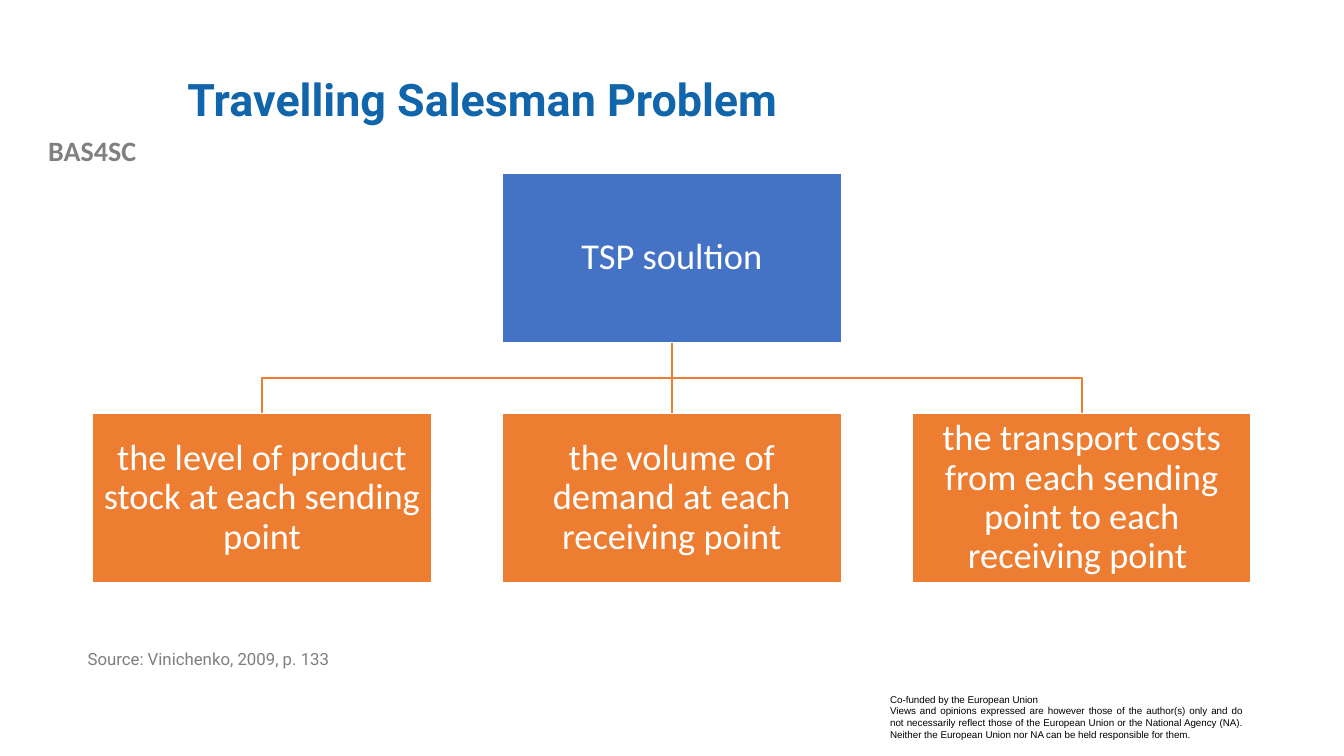
from dataclasses import dataclass

from lxml import etree
from pptx import Presentation
from pptx import util as u
from pptx.dml.color import RGBColor
from pptx.enum import shapes, text
from pptx.oxml import ns


@dataclass(frozen=True)
class Theme:
    title: str = "1065AB"
    root: str = "4472C4"
    child: str = "ED7D31"
    paper: str = "FFFFFF"
    ink: str = "000000"
    project: str = "808080"
    source: str = "7F7F7F"
    heading_font: str = "Roboto"
    body_font: str = "Calibri"
    legal_font: str = "Arial"
    title_size: int = 32
    node_size: int = 26
    project_size: int = 20
    source_size: int = 12
    legal_size: int = 7
    line_width: int = 1


THEME = Theme()
ALIGN = text.PP_ALIGN
ANCHOR = text.MSO_ANCHOR


def rgb(value):
    return RGBColor.from_string(value)


def inches(box):
    return [u.Inches(length) for length in box]


def write(shape, lines, font, size, color, bold=False, align=ALIGN.LEFT,
          anchor=ANCHOR.TOP, spacing=1.0, inset=None):
    frame = shape.text_frame
    frame.word_wrap = True
    frame.vertical_anchor = anchor
    if inset is not None:
        frame.margin_left = frame.margin_right = u.Inches(inset)
        frame.margin_top = frame.margin_bottom = u.Inches(inset)
    frame.text = "\n".join(lines)
    for para in frame.paragraphs:
        para.alignment = align
        para.line_spacing = spacing
        para.font.name = font
        para.font.size = u.Pt(size)
        para.font.bold = bold
        para.font.color.rgb = rgb(color)


def add_label(page, box, line, *style, **layout):
    write(page.shapes.add_textbox(*inches(box)), [line], *style, **layout)


def add_rectangle(page, box, fill):
    shape = page.shapes.add_shape(shapes.MSO_SHAPE.RECTANGLE, *inches(box))
    shape.shadow.inherit = False
    shape.fill.solid()
    shape.fill.fore_color.rgb = rgb(fill)
    shape.line.fill.background()
    return shape


def add_node(page, box, label, fill):
    node = add_rectangle(page, box, fill)
    node.line.color.rgb = rgb(THEME.paper)
    node.line.width = u.Pt(THEME.line_width)
    write(node, [label], THEME.body_font, THEME.node_size, THEME.paper,
          align=ALIGN.CENTER, anchor=ANCHOR.MIDDLE, spacing=0.9, inset=0.02)
    return node


def style_branch(branch):
    branch.line.color.rgb = rgb(THEME.child)
    branch.line.width = u.Pt(THEME.line_width)


def add_straight_branch(page, root, child):
    branch = page.shapes.add_connector(shapes.MSO_CONNECTOR.STRAIGHT, 0, 0, 0, 0)
    branch.begin_connect(root, 2)
    branch.end_connect(child, 0)
    style_branch(branch)
    etree.SubElement(branch.element.spPr, ns.qn("a:effectLst"))


def add_elbow_branch(page, root, child):
    start_x, start_y = root.left + root.width // 2, root.top + root.height
    end_x, end_y = child.left + child.width // 2, child.top
    middle_y = (start_y + end_y) // 2
    builder = page.shapes.build_freeform(start_x, start_y)
    builder.add_line_segments(
        [(start_x, middle_y), (end_x, middle_y), (end_x, end_y)], close=False)
    branch = builder.convert_to_shape()
    branch.shadow.inherit = False
    branch.fill.background()
    style_branch(branch)


def add_hierarchy(page, box, root_label, child_labels):
    """Place a centred root above an evenly spaced row of children."""
    left, top, width, height = box
    node_width, node_height = 3.36, 1.68
    step = (width - node_width) / (len(child_labels) - 1)
    root = add_node(page, (left + (width - node_width) / 2, top, node_width, node_height),
                    root_label, THEME.root)
    child_top = top + height - node_height
    for index, label in enumerate(child_labels):
        child = add_node(page, (left + index * step, child_top, node_width, node_height),
                         label, THEME.child)
        if 2 * index == len(child_labels) - 1:
            add_straight_branch(page, root, child)
        else:
            add_elbow_branch(page, root, child)


def add_header(page, box):
    left, top, width, height = box
    add_label(page, (left, top + 0.88, 1.83, 0.44), "BAS4SC",
              THEME.body_font, THEME.project_size, THEME.project,
              bold=True, align=ALIGN.CENTER)
    add_label(page, (left + 1.76, top, width - 1.76, height - 0.1),
              "Travelling Salesman Problem",
              THEME.heading_font, THEME.title_size, THEME.title,
              bold=True, anchor=ANCHOR.MIDDLE, spacing=0.9)


def add_footer(page, box):
    left, top, width, height = box
    add_label(page, (left, top, 5.01, 0.52), "Source: Vinichenko, 2009, p. 133",
              THEME.heading_font, THEME.source_size, THEME.source, spacing=0.9)
    notice = add_rectangle(
        page, (left + width - 3.69, top + height - 0.57, 3.69, 0.57), THEME.paper)
    write(notice, [
        "Co-funded by the European Union",
        "Views and opinions expressed are however those of the author(s) only and do "
        "not necessarily reflect those of the European Union or the National Agency "
        "(NA). Neither the European Union nor NA can be held responsible for them.",
    ], THEME.legal_font, THEME.legal_size, THEME.ink, align=ALIGN.JUSTIFY)


def main():
    deck = Presentation()
    deck.slide_width, deck.slide_height = u.Inches(13.33), u.Inches(7.5)
    page = deck.slides.add_slide(deck.slide_layouts[6])
    add_header(page, (0, 0.4, 13.33, 1.32))
    add_hierarchy(page, (0.92, 1.72, 11.49, 4.06), "TSP soultion", [
        "the level of product stock at each sending point",
        "the volume of demand at each receiving point",
        "the transport costs from each sending point to each receiving point ",
    ])
    add_footer(page, (0.77, 6.41, 11.65, 0.99))
    deck.save("out.pptx")


if __name__ == "__main__":
    main()
